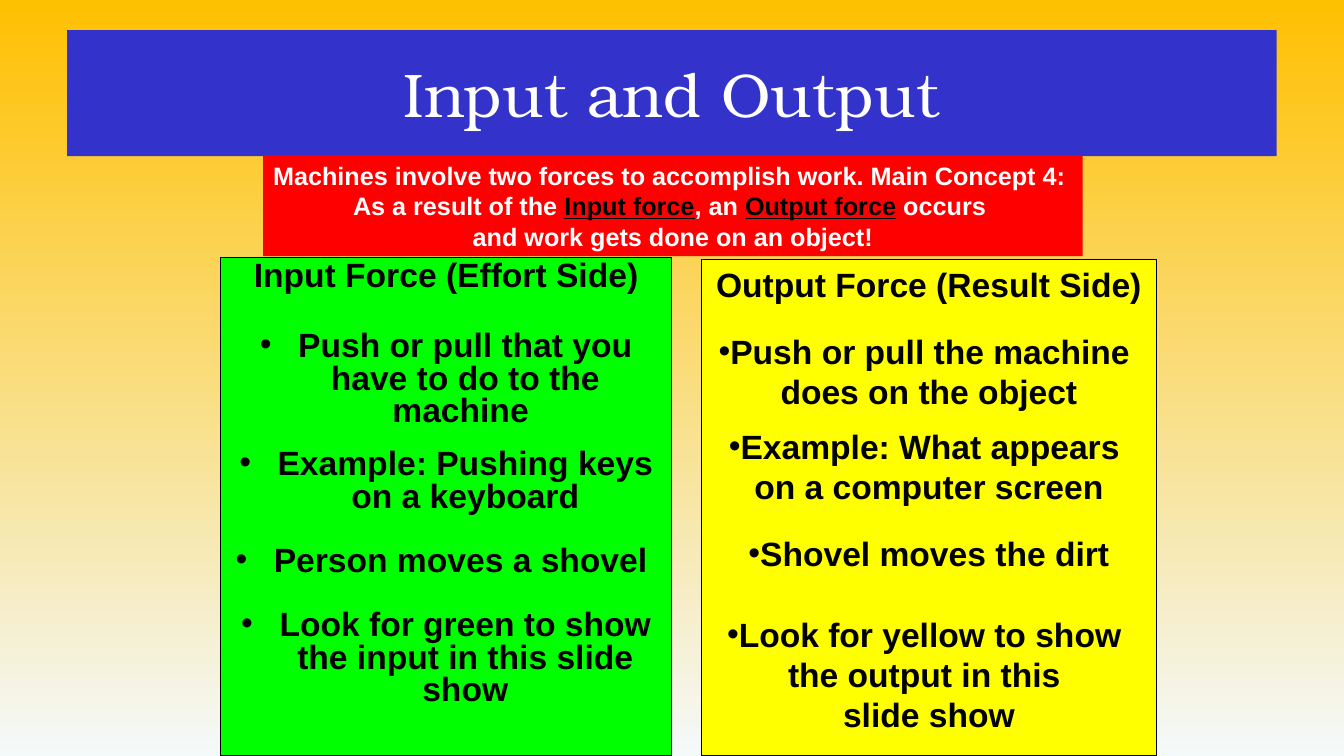
import pptx
import pptx.util
import pptx.dml.color
import pptx.enum.shapes
import pptx.enum.text
import lxml.etree
from pptx.oxml.ns import qn

presentation = pptx.Presentation()
presentation.slide_width = pptx.util.Inches(13.333)
presentation.slide_height = pptx.util.Inches(7.5)
column = presentation.slide_width / 100
row = presentation.slide_height / 100

slide = presentation.slides.add_slide(presentation.slide_layouts[1])
rectangle = pptx.enum.shapes.MSO_SHAPE.RECTANGLE
title, input_panel = slide.placeholders
output_panel = slide.shapes.add_shape(rectangle, 0, 0, 0, 0)
banner = slide.shapes.add_shape(rectangle, 0, 0, 0, 0)


def color(hex_string):
    return pptx.dml.color.RGBColor.from_string(hex_string)


def write(paragraph, runs, size, font_name, text_color, bold=True, space=0, bulleted=False, indent=0, line_spacing=1.0):
    paragraph.alignment = pptx.enum.text.PP_ALIGN.CENTER
    paragraph.line_spacing = line_spacing
    paragraph.space_before = pptx.util.Pt(space)
    properties = paragraph._p.get_or_add_pPr()
    properties.set("marL", str(pptx.util.Inches(indent)))
    properties.set("indent", str(-pptx.util.Inches(indent)))
    if bulleted:
        lxml.etree.SubElement(properties, qn("a:buFont")).set("typeface", "Arial")
        lxml.etree.SubElement(properties, qn("a:buChar")).set("char", "•")
    else:
        lxml.etree.SubElement(properties, qn("a:buNone"))
    paragraph.font.size = pptx.util.Pt(size)
    paragraph.font.name = font_name
    paragraph.font.bold = bold
    mixed = len(runs) > 1
    if not mixed:
        paragraph.font.color.rgb = color(text_color)
    for number, text in enumerate(runs):
        run = paragraph.add_run()
        run.text = text
        if mixed:
            is_key_term = number % 2 == 1
            run.font.color.rgb = color("000000" if is_key_term else text_color)
            run.font.underline = is_key_term


background = slide.background.fill
background.gradient()
background.gradient_angle = 270
for stop, stop_color in zip(background.gradient_stops, ["FFC000", "F4F9FA"]):
    stop.color.rgb = color(stop_color)

boxes = [
    (title, 5, 4, 90, 16.67, "3333CC", False),
    (input_panel, 16.43, 34, 33.53, 66, "00FF00", True),
    (output_panel, 52.2, 34.27, 33.83, 65.73, "FFFF00", True),
    (banner, 19.58, 20.55, 60.98, 13.33, "FF0000", False),
]
for shape, left, top, width, height, fill_color, outlined in boxes:
    shape.left, shape.width = int(left * column), int(width * column)
    shape.top, shape.height = int(top * row), int(height * row)
    shape.fill.solid()
    shape.fill.fore_color.rgb = color(fill_color)
    shape.shadow.inherit = False
    if outlined:
        shape.line.color.rgb = color("000000")
        shape.line.width = pptx.util.Pt(0.75)
    else:
        shape.line.fill.background()
    frame = shape.text_frame
    frame.auto_size = pptx.enum.text.MSO_AUTO_SIZE.NONE
    frame.word_wrap = shape in (title, input_panel)
    frame.vertical_anchor = pptx.enum.text.MSO_ANCHOR.TOP
title.text_frame.vertical_anchor = pptx.enum.text.MSO_ANCHOR.MIDDLE

write(title.text_frame.paragraphs[0], ["Input and Output"], 44, "TeX Gyre Bonum", "FFFFFF", bold=False)

input_lines = [
    ("Input Force (Effort Side)", 0, False),
    ("Push or pull that you have to do to the machine ", 27, True),
    ("Example: Pushing keys on a keyboard", 15, True),
    ("Person moves a shovel ", 23, True),
    ("Look for green to show the input in this slide show", 23, True),
]
output_lines = [
    ("Output Force (Result Side)", 0, False),
    ("Push or pull the machine ", 19, True),
    ("does on the object", 0, False),
    ("Example: What appears ", 10, True),
    ("on a computer screen", 0, False),
    ("Shovel moves the dirt", 19, True),
    ("Look for yellow to show ", 29, True),
    ("the output in this ", 0, False),
    ("slide show", 0, False),
]
for panel, lines, indent, line_spacing in [(input_panel, input_lines, 0.38, 0.8), (output_panel, output_lines, 0, 1.0)]:
    frame = panel.text_frame
    for number, (text, space, bulleted) in enumerate(lines):
        paragraph = frame.add_paragraph() if number else frame.paragraphs[0]
        write(paragraph, [text], 24, "Arial", "000000", space=space, bulleted=bulleted,
              indent=indent, line_spacing=line_spacing)

banner_lines = [
    ["Machines involve two forces to accomplish work. Main Concept 4: "],
    ["As a result of the ", "Input force", ", an ", "Output force", " occurs "],
    ["and work gets done on an object!"],
]
for number, runs in enumerate(banner_lines):
    frame = banner.text_frame
    paragraph = frame.add_paragraph() if number else frame.paragraphs[0]
    write(paragraph, runs, 18, "Arial", "FFFFFF")

presentation.save("out.pptx")
